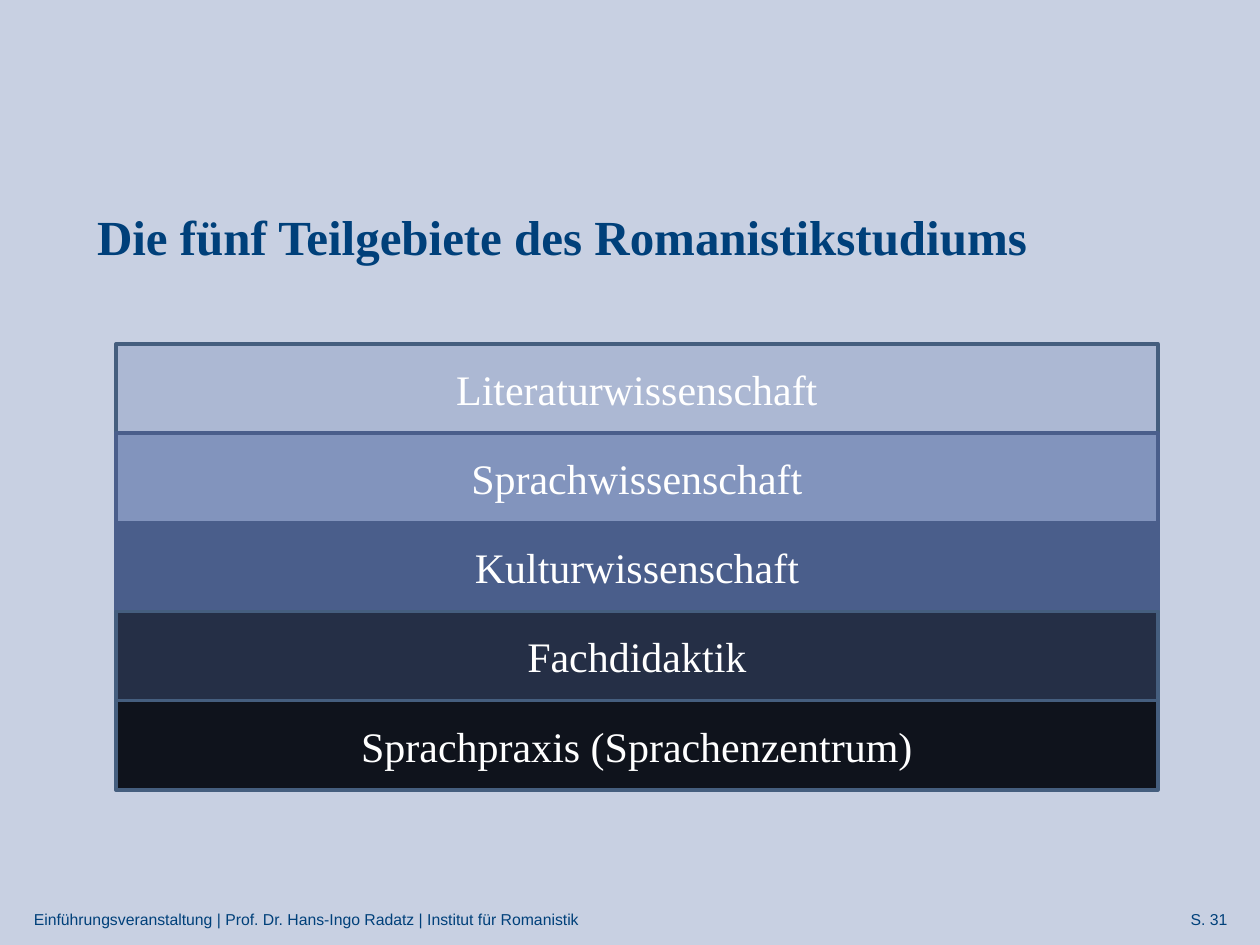
from dataclasses import dataclass

from pptx import Presentation
from pptx.dml.color import RGBColor as RGB
from pptx.enum.shapes import MSO_SHAPE as Shape
from pptx.enum.text import MSO_ANCHOR as Anchor, PP_ALIGN as Align
from pptx.util import Inches, Pt


@dataclass(frozen=True)
class Theme:
    background: str = "C8D0E2"
    accent: str = "00407A"
    band_text: str = "FFFFFF"
    steel: str = "455E7E"
    indigo: str = "4A5E8B"
    serif: str = "Times New Roman"
    sans: str = "Arial"
    title_size: int = 28
    band_size: int = 24
    footer_size: int = 9
    border: int = 2


class SlideBuilder:
    def __init__(self, slide, theme):
        self.slide = slide
        self.theme = theme
        background = slide.background.fill
        background.solid()
        background.fore_color.rgb = RGB.from_string(theme.background)

    def set_text(self, frame, text, font_name, size, color,
                 align=Align.LEFT, bold=False):
        frame.word_wrap = True
        frame.vertical_anchor = Anchor.MIDDLE
        paragraph = frame.paragraphs[0]
        paragraph.text = text
        paragraph.alignment = align
        font = paragraph.font
        font.name, font.size, font.bold = font_name, Pt(size), bold
        font.color.rgb = RGB.from_string(color)

    def title(self, text, left, top, width, height):
        heading = self.slide.shapes.title
        heading.left, heading.top = Inches(left), Inches(top)
        heading.width, heading.height = Inches(width), Inches(height)
        self.set_text(heading.text_frame, text, self.theme.serif,
                      self.theme.title_size, self.theme.accent, bold=True)

    def footer(self, text, left, width, align=Align.LEFT):
        note = self.slide.shapes.add_textbox(
            Inches(left), Inches(7.17), Inches(width), Inches(0.25))
        self.set_text(note.text_frame, text, self.theme.sans,
                      self.theme.footer_size, self.theme.accent, align)

    def band(self, text, fill, border, left, top, width, height):
        band = self.slide.shapes.add_shape(
            Shape.RECTANGLE, Inches(left), Inches(top),
            Inches(width), Inches(height))
        band.shadow.inherit = False
        band.fill.solid()
        band.fill.fore_color.rgb = RGB.from_string(fill)
        band.line.color.rgb = RGB.from_string(border)
        band.line.width = Pt(self.theme.border)
        self.set_text(band.text_frame, text, self.theme.serif,
                      self.theme.band_size, self.theme.band_text, Align.CENTER)

    def stack(self, bands, left, top, width, height):
        """Share the height equally among (text, fill, border) bands."""
        step = height / len(bands)
        for row, (text, fill, border) in enumerate(bands):
            self.band(text, fill, border, left, top + row * step, width, step)


def main():
    deck = Presentation()
    deck.slide_width, deck.slide_height = Inches(10), Inches(7.5)
    theme = Theme()
    title_only = deck.slide_layouts[5]
    builder = SlideBuilder(deck.slides.add_slide(title_only), theme)

    builder.footer("S. 31", 8.67, 1.17, Align.RIGHT)
    builder.footer("Einführungsveranstaltung | Prof. Dr. Hans-Ingo Radatz | "
                   "Institut für Romanistik", 0.17, 8.25)
    builder.title("Die fünf Teilgebiete des Romanistikstudiums",
                  0.67, 1.25, 8.66, 1.25)
    subfields = [
        ("Literaturwissenschaft", "ACB8D3", theme.steel),
        ("Sprachwissenschaft", "8294BD", theme.indigo),
        ("Kulturwissenschaft", theme.indigo, theme.indigo),
        ("Fachdidaktik", "252F46", theme.steel),
        ("Sprachpraxis (Sprachenzentrum)", "0F131C", theme.steel),
    ]
    builder.stack(subfields, 0.92, 2.73, 8.27, 3.54)
    deck.save("out.pptx")


if __name__ == "__main__":
    main()
